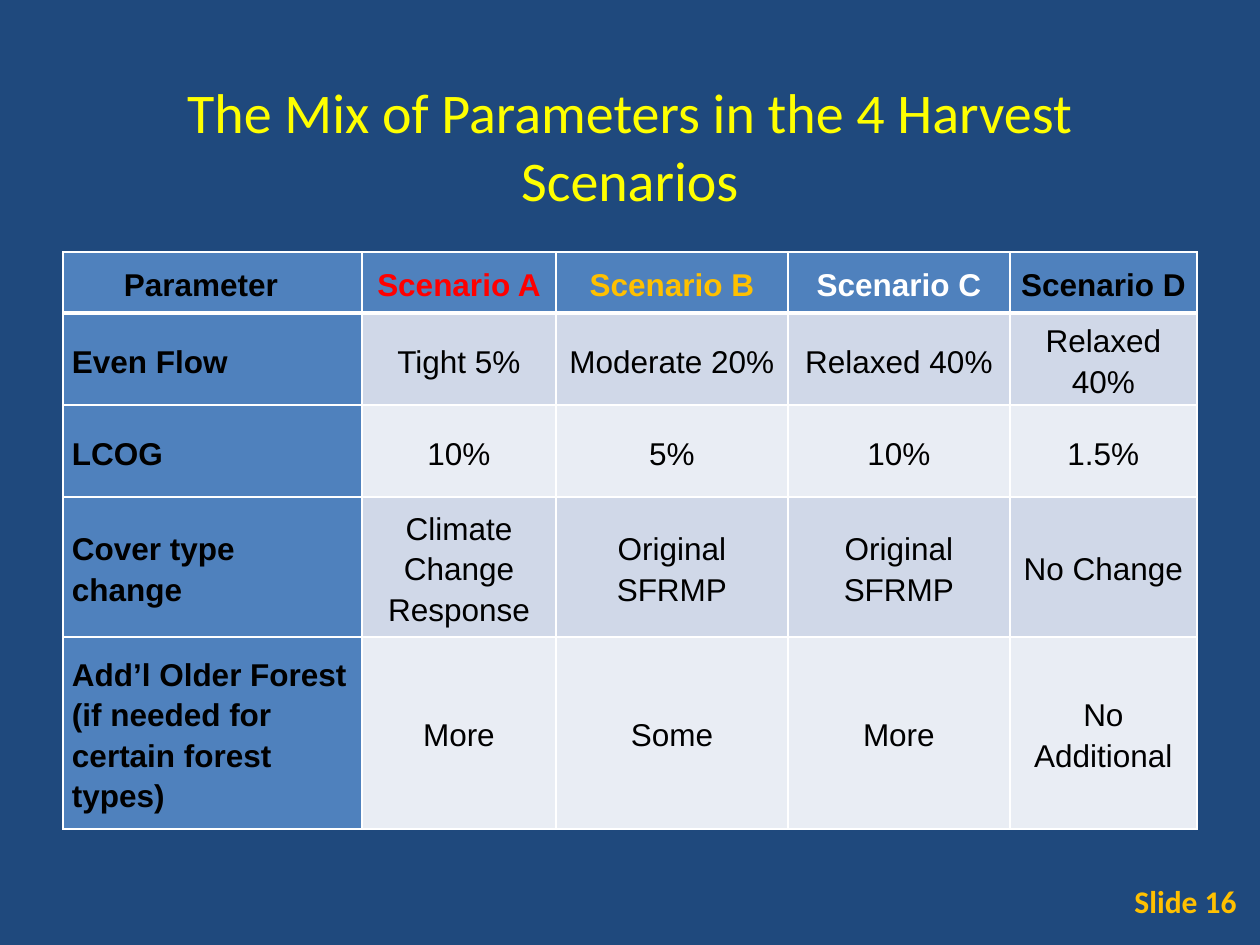
from lxml import etree
from pptx import Presentation
from pptx import util as u
from pptx.dml.color import RGBColor
from pptx.enum import text
from pptx.oxml import ns

PX = 914400 / 126

NAVY = RGBColor(0x1F, 0x49, 0x7D)
BLUE = RGBColor(0x4F, 0x81, 0xBD)
BAND_DARK = RGBColor(0xD0, 0xD8, 0xE8)
BAND_LIGHT = RGBColor(0xE9, 0xED, 0xF4)
BLACK = RGBColor(0, 0, 0)
WHITE = RGBColor(0xFF, 0xFF, 0xFF)
RED = RGBColor(0xFF, 0, 0)
GOLD = RGBColor(0xFF, 0xC0, 0)
YELLOW = RGBColor(0xFF, 0xFF, 0)

LEFT, CENTER, RIGHT = text.PP_ALIGN.LEFT, text.PP_ALIGN.CENTER, text.PP_ALIGN.RIGHT


def px(value):
    return u.Emu(round(value * PX))


def write(frame, words, font="Arial", size=18, color=BLACK, bold=False, align=CENTER, spacing=1.0):
    frame.word_wrap = True
    para = frame.paragraphs[0]
    para.alignment = align
    para.line_spacing = spacing
    span = para.add_run()
    span.text = words
    span.font.name = font
    span.font.size = u.Pt(size)
    span.font.bold = bold
    span.font.color.rgb = color


deck = Presentation()
deck.slide_width = px(1260)
deck.slide_height = px(945)
page = deck.slides.add_slide(deck.slide_layouts[5])
page.background.fill.solid()
page.background.fill.fore_color.rgb = NAVY

title = page.shapes.title
title.left, title.top, title.width, title.height = px(63), px(77), px(1134), px(136)
title.text_frame.margin_left = title.text_frame.margin_right = px(20)
title.text_frame.vertical_anchor = text.MSO_ANCHOR.MIDDLE
write(title.text_frame, "The Mix of Parameters in the 4 Harvest Scenarios",
      font="Calibri", size=32, color=YELLOW)

box = page.shapes.add_textbox(px(955), px(876), px(294), px(50))
box.text_frame.vertical_anchor = text.MSO_ANCHOR.MIDDLE
write(box.text_frame, "Slide 16", font="Calibri", color=GOLD, bold=True, align=RIGHT)

rows = [
    ["Parameter", "Scenario A", "Scenario B", "Scenario C", "Scenario D"],
    ["Even Flow", "Tight 5%", "Moderate 20%", "Relaxed 40%", "Relaxed 40%"],
    ["LCOG", "10%", "5%", "10%", "1.5%"],
    ["Cover type change", "Climate Change Response", "Original SFRMP", "Original SFRMP", "No Change"],
    ["Add’l Older Forest (if needed for certain forest types)", "More", "Some", "More", "No Additional"],
]
header_colors = [BLACK, RED, GOLD, WHITE, BLACK]
column_widths = [299, 194, 232, 222, 187]
row_heights = [61, 92, 92, 140, 192]

table = page.shapes.add_table(len(rows), len(column_widths), px(63), px(252),
                              px(sum(column_widths)), px(sum(row_heights))).table
for column, width in zip(table.columns, column_widths):
    column.width = px(width)
for row, height in zip(table.rows, row_heights):
    row.height = px(height)

for r, row in enumerate(rows):
    for c, words in enumerate(row):
        cell = table.cell(r, c)
        cell.vertical_anchor = text.MSO_ANCHOR.MIDDLE
        cell.margin_left = px(61 if r == c == 0 else 9)
        cell.margin_right = px(9)
        cell.margin_top = px(1)
        cell.margin_bottom = 0
        properties = cell._tc.get_or_add_tcPr()
        for side in ("lnL", "lnR", "lnT", "lnB"):
            under_header = (r, side) in ((0, "lnB"), (1, "lnT"))
            line = etree.SubElement(properties, ns.qn("a:" + side), w=str(u.Pt(3 if under_header else 1)))
            fill = etree.SubElement(line, ns.qn("a:solidFill"))
            etree.SubElement(fill, ns.qn("a:srgbClr"), val=str(WHITE))
        heading = r == 0 or c == 0
        cell.fill.solid()
        cell.fill.fore_color.rgb = BLUE if heading else (BAND_DARK if r % 2 else BAND_LIGHT)
        write(cell.text_frame, words, color=BLACK if r else header_colors[c], bold=heading,
              align=CENTER if c else LEFT, spacing=1.15)

deck.save("out.pptx")
